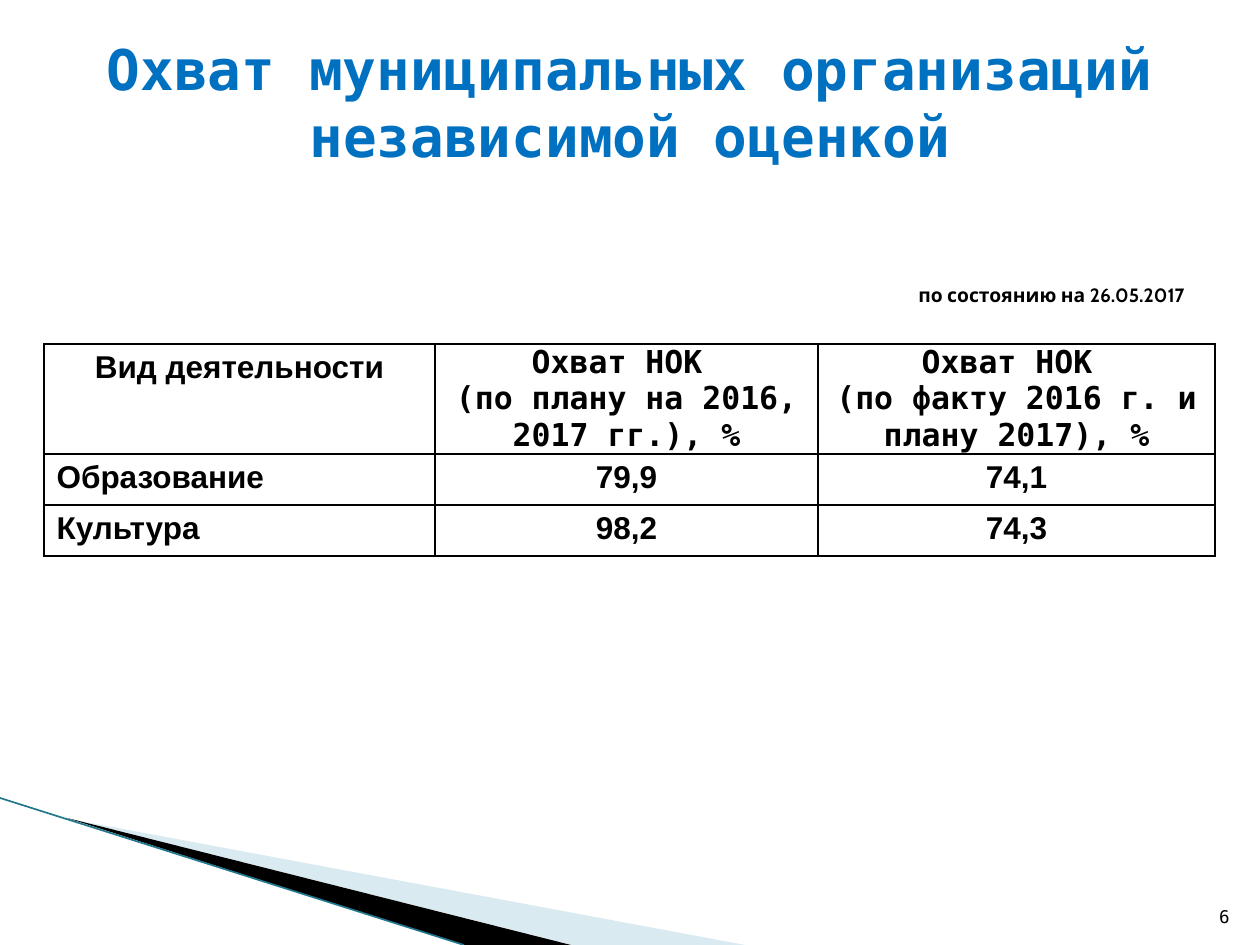
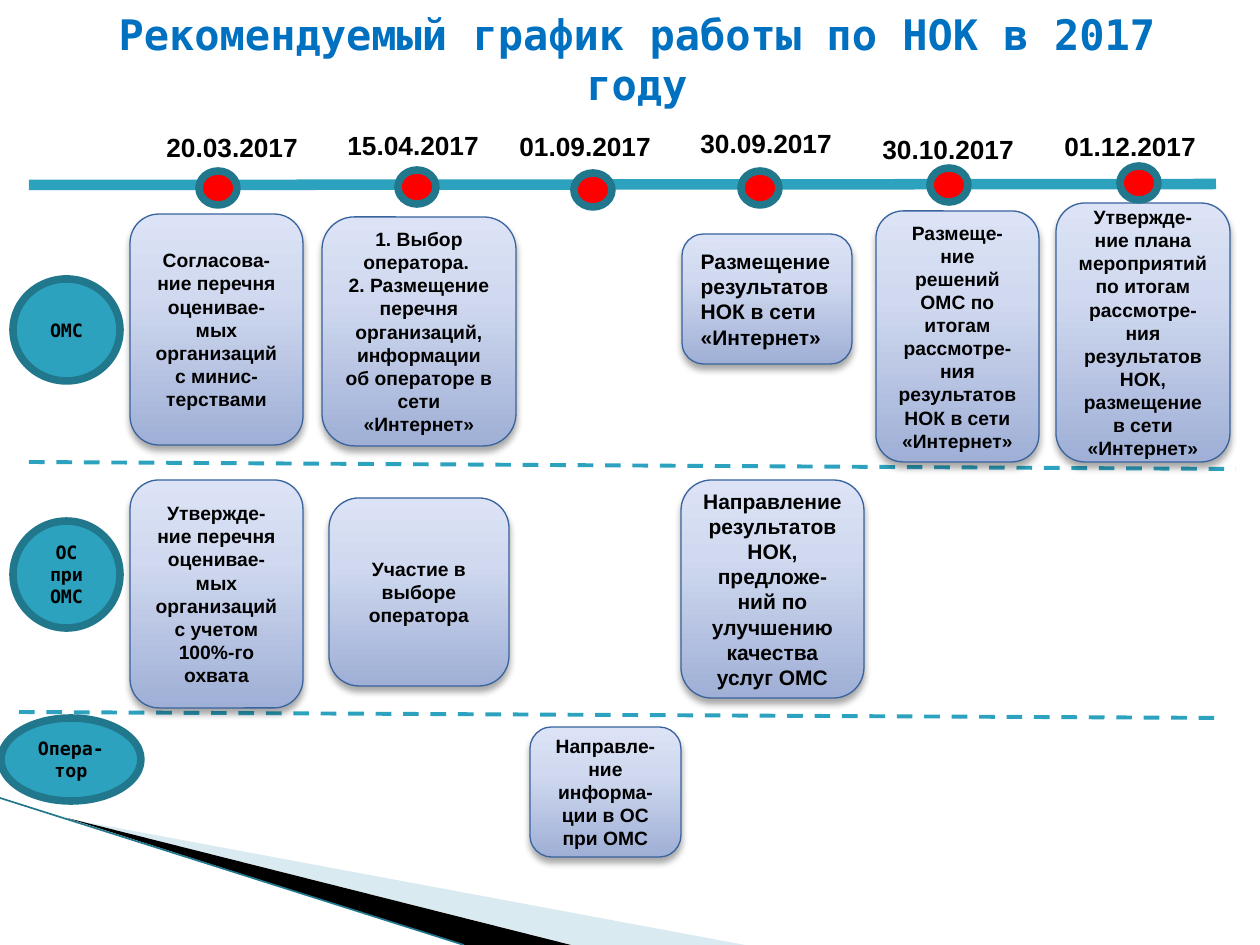
from lxml import etree
from pptx import Presentation
from pptx import util as u
from pptx.dml.color import RGBColor
from pptx.enum import dml, shapes, text
from pptx.oxml import parse_xml
from pptx.oxml.ns import nsdecls, qn

PX = 914400 / 126
BLUE = RGBColor(0x00, 0x70, 0xC0)
TEAL = RGBColor(0x2D, 0xA2, 0xBF)
DARK_TEAL = RGBColor(0x21, 0x78, 0x8D)
PALE_TEAL = RGBColor(0xA0, 0xCB, 0xDC)
CARD_EDGE = RGBColor(0x39, 0x63, 0x9D)
RED = RGBColor(0xFF, 0x00, 0x00)
BLACK = RGBColor(0x00, 0x00, 0x00)
CARD_STOPS = ((0, "9FAFD6"), (65, "D0D9EF"), (100, "DCE3F6"))
SANS, MONO, NOTE = "Arial", "DejaVu Sans Mono", "Cabin"
LEFT, CENTER, RIGHT = text.PP_ALIGN.LEFT, text.PP_ALIGN.CENTER, text.PP_ALIGN.RIGHT
TOP, MIDDLE, BOTTOM = text.MSO_ANCHOR.TOP, text.MSO_ANCHOR.MIDDLE, text.MSO_ANCHOR.BOTTOM

COVERAGE = [
    (["Вид деятельности"], ["Охват НОК ", "(по плану на 2016, 2017 гг.), %"],
     ["Охват НОК ", "(по факту 2016 г. и плану 2017), %"]),
    (["Образование"], ["79,9"], ["74,1"]),
    (["Культура"], ["98,2"], ["74,3"]),
]
# date, label left and top, dot left and top
MILESTONES = [
    ("20.03.2017", 154, 125, 199, 171),
    ("15.04.2017", 335, 123, 398, 170),
    ("01.09.2017", 507, 124, 574, 173),
    ("30.09.2017", 688, 121, 741, 171),
    ("30.10.2017", 870, 127, 930, 168),
    ("01.12.2017", 1052, 124, 1120, 166),
]
ROLES = [
    ("ОМС", (13, 279, 107, 102)),
    ("ОС при ОМС", (13, 521, 107, 107)),
    ("Опера-тор", (1, 718, 140, 83)),
]
# paragraphs, place, size, alignment
CARDS = [
    (["Согласова-ние перечня оценивае-мых организаций с минис-терствами"],
     (130, 214, 173, 231), 11, CENTER),
    (["1. Выбор оператора. ",
      "2. Размещение перечня организаций, информации об операторе в сети «Интернет»"],
     (322, 217, 194, 229), 11, CENTER),
    (["Размещение результатов НОК в сети «Интернет»"],
     (682, 234, 170, 130), 12, LEFT),
    (["Размеще-ние решений ОМС по итогам рассмотре-ния результатов НОК в сети «Интернет»"],
     (876, 211, 163, 251), 11, CENTER),
    (["Утвержде-ние плана мероприятий по итогам рассмотре-ния результатов НОК, "
      "размещение в сети «Интернет»"],
     (1056, 203, 174, 259), 11, CENTER),
    (["Утвержде-ние перечня оценивае-мых организаций с учетом 100%-го охвата"],
     (130, 480, 173, 228), 11, CENTER),
    (["Участие в выборе оператора"], (329, 498, 180, 188), 11, CENTER),
    (["Направление результатов НОК, предложе-ний по улучшению качества услуг ОМС"],
     (681, 480, 183, 218), 12, CENTER),
    (["Направле-ние информа-ции в ОС при ОМС"], (530, 727, 151, 130), 11, CENTER),
]


def px(length):
    return u.Emu(round(length * PX))


def write(frame, lines, size, font, align=LEFT, color=BLACK, bold=True):
    for index, line in enumerate(lines):
        para = frame.paragraphs[0] if index == 0 else frame.add_paragraph()
        para.alignment = align
        span = para.add_run()
        span.text = line
        span.font.size = u.Pt(size)
        span.font.name = font
        span.font.bold = bold
        span.font.color.rgb = color


def add_text(page, place, line, size, font, align=LEFT, anchor=TOP, color=BLACK, bold=True):
    box = page.shapes.add_textbox(*map(px, place))
    box.text_frame.word_wrap = True
    box.text_frame.vertical_anchor = anchor
    write(box.text_frame, [line], size, font, align, color, bold)


def add_title(page, place, line, size):
    add_text(page, place, line, size, MONO, CENTER, MIDDLE, BLUE)


def add_line(page, start, end, color, width, dashed=False):
    line = page.shapes.add_connector(shapes.MSO_CONNECTOR.STRAIGHT, *map(px, start + end))
    line.line.color.rgb = color
    line.line.width = u.Pt(width)
    if dashed:
        line.line.dash_style = dml.MSO_LINE.DASH
    etree.SubElement(line._element.spPr, qn("a:effectLst"))


def add_wedge(page, points, color, opacity=100):
    builder = page.shapes.build_freeform(*points[0], scale=PX)
    builder.add_line_segments(points[1:], close=True)
    wedge = builder.convert_to_shape()
    wedge.shadow.inherit = False
    wedge.fill.solid()
    wedge.fill.fore_color.rgb = color
    wedge.line.fill.background()
    if opacity < 100:
        tint = wedge._element.spPr.find(qn("a:solidFill"))[0]
        etree.SubElement(tint, qn("a:alpha"), val=str(opacity * 1000))


def add_corner_band(page):
    add_wedge(page, [(69, 819), (745, 945), (572, 945)], PALE_TEAL, 40)
    add_wedge(page, [(67, 818), (571, 945), (463, 945)], BLACK)
    add_line(page, (0, 798), (464, 945), DARK_TEAL, 0.95)


def add_oval(page, place, color, label=None):
    oval = page.shapes.add_shape(shapes.MSO_SHAPE.OVAL, *map(px, place))
    oval.shadow.inherit = False
    oval.fill.solid()
    oval.fill.fore_color.rgb = color
    oval.line.color.rgb = DARK_TEAL
    oval.line.width = u.Pt(4.33)
    if label:
        oval.text_frame.vertical_anchor = MIDDLE
        write(oval.text_frame, [label], 10.5, MONO, CENTER)


def add_card(page, lines, place, size, align):
    """Rounded box with an upward gradient and a soft shadow below."""
    card = page.shapes.add_shape(shapes.MSO_SHAPE.ROUNDED_RECTANGLE, *map(px, place))
    card.line.color.rgb = CARD_EDGE
    card.line.width = u.Pt(0.75)
    card.shadow.inherit = False
    stops = "".join(f'<a:gs pos="{at * 1000}"><a:srgbClr val="{color}"/></a:gs>'
                    for at, color in CARD_STOPS)
    properties = card._element.spPr
    properties.find(qn("a:prstGeom")).addnext(parse_xml(
        f'<a:gradFill {nsdecls("a")}><a:gsLst>{stops}</a:gsLst>'
        '<a:lin ang="16200000" scaled="0"/></a:gradFill>'))
    properties.find(qn("a:effectLst")).append(parse_xml(
        f'<a:outerShdw {nsdecls("a")} blurRad="{u.Pt(4)}" dist="{u.Pt(3)}" dir="5400000" '
        'rotWithShape="0"><a:srgbClr val="000000"><a:alpha val="35000"/></a:srgbClr>'
        '</a:outerShdw>'))
    card.text_frame.word_wrap = True
    card.text_frame.vertical_anchor = MIDDLE
    write(card.text_frame, lines, size, SANS, align)


def add_borders(cell):
    properties = cell._tc.get_or_add_tcPr()
    for index, side in enumerate(("lnL", "lnR", "lnT", "lnB")):
        properties.insert(index, parse_xml(
            f'<a:{side} {nsdecls("a")} w="{u.Pt(1)}"><a:solidFill>'
            f'<a:srgbClr val="{BLACK}"/></a:solidFill></a:{side}>'))


def add_coverage_table(page):
    widths, heights = (391, 383, 397), (110, 51, 51)
    table = page.shapes.add_table(
        len(heights), len(widths), px(44), px(344), px(sum(widths)), px(sum(heights))).table
    table.first_row = table.horz_banding = False
    for column, width in zip(table.columns, widths):
        column.width = px(width)
    for row, height in zip(table.rows, heights):
        row.height = px(height)
    for row, values in enumerate(COVERAGE):
        for column, lines in enumerate(values):
            cell = table.cell(row, column)
            cell.fill.background()
            add_borders(cell)
            measure_heading = row == 0 and column > 0
            if measure_heading:
                cell.vertical_anchor = MIDDLE
                cell.margin_left = cell.margin_right = 0
                cell.margin_top = cell.margin_bottom = 0
            write(cell.text_frame, lines, 18, MONO if measure_heading else SANS,
                  LEFT if row > 0 and column == 0 else CENTER)


def add_coverage_page(deck):
    page = deck.slides.add_slide(deck.slide_layouts[6])
    add_corner_band(page)
    add_coverage_table(page)
    add_text(page, (1192, 883, 50, 50), "6", 10, MONO, RIGHT, BOTTOM, bold=False)
    add_title(page, (63, 38, 1134, 127),
              "Охват муниципальных организаций независимой оценкой", 32)
    add_text(page, (906, 277, 312, 37), "по состоянию на 26.05.2017", 11, NOTE)


def add_schedule_page(deck):
    page = deck.slides.add_slide(deck.slide_layouts[6])
    add_corner_band(page)
    add_title(page, (44, 39, 1186, 39), "Рекомендуемый график работы по НОК в 2017 году", 24)
    add_line(page, (29, 185), (1216, 184), TEAL, 6)
    add_line(page, (29, 462), (1236, 469), TEAL, 2.25, dashed=True)
    add_line(page, (19, 712), (1226, 718), TEAL, 2.25, dashed=True)
    for label, place in ROLES:
        add_oval(page, place, TEAL, label)
    for card in CARDS:
        add_card(page, *card)
    for date, label_left, label_top, dot_left, dot_top in MILESTONES:
        add_text(page, (label_left, label_top, 169, 44), date, 15, SANS)
        add_oval(page, (dot_left, dot_top, 38, 34), RED)


def main():
    deck = Presentation()
    deck.slide_width, deck.slide_height = px(1260), px(945)
    add_coverage_page(deck)
    add_schedule_page(deck)
    deck.save("out.pptx")


if __name__ == "__main__":
    main()
